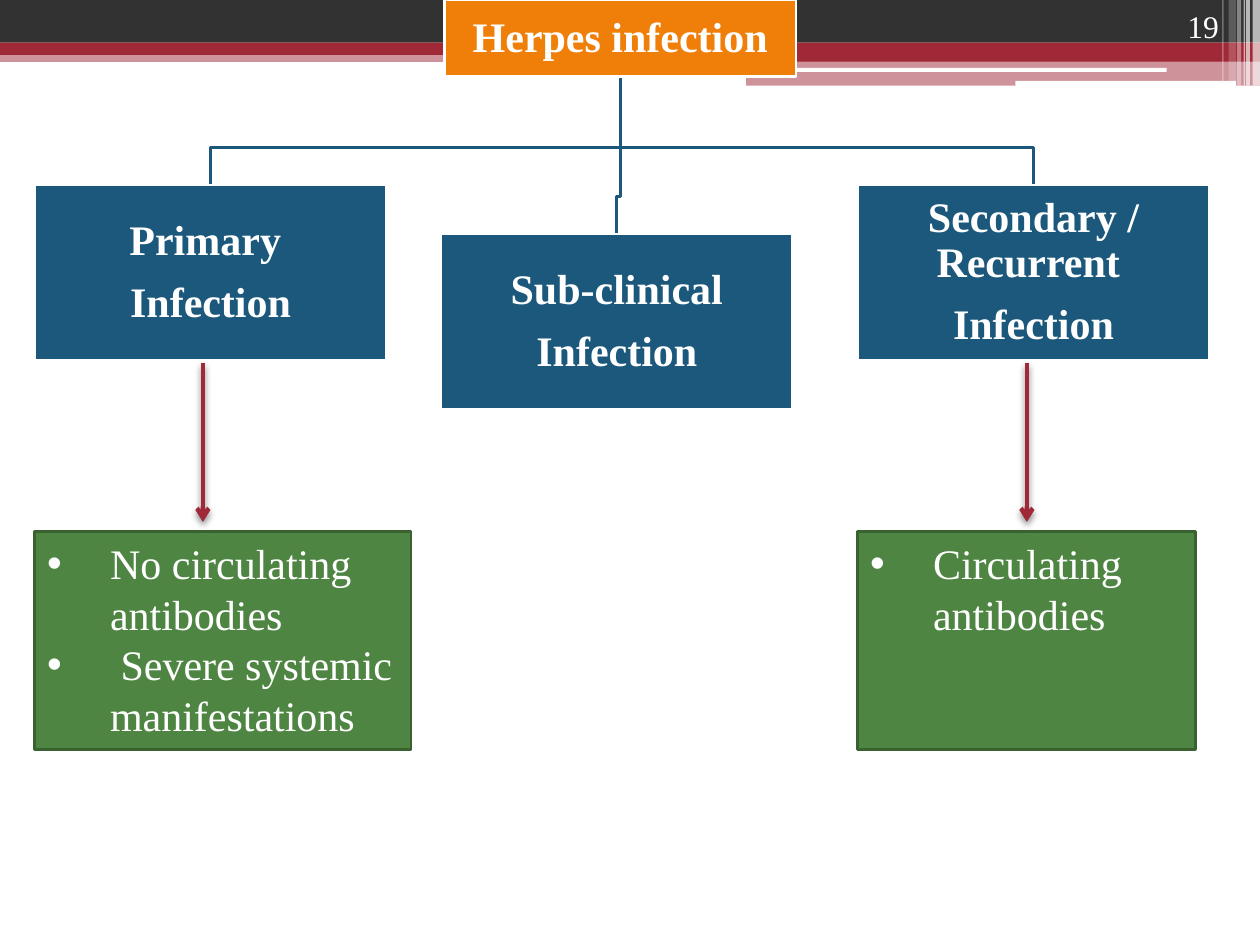
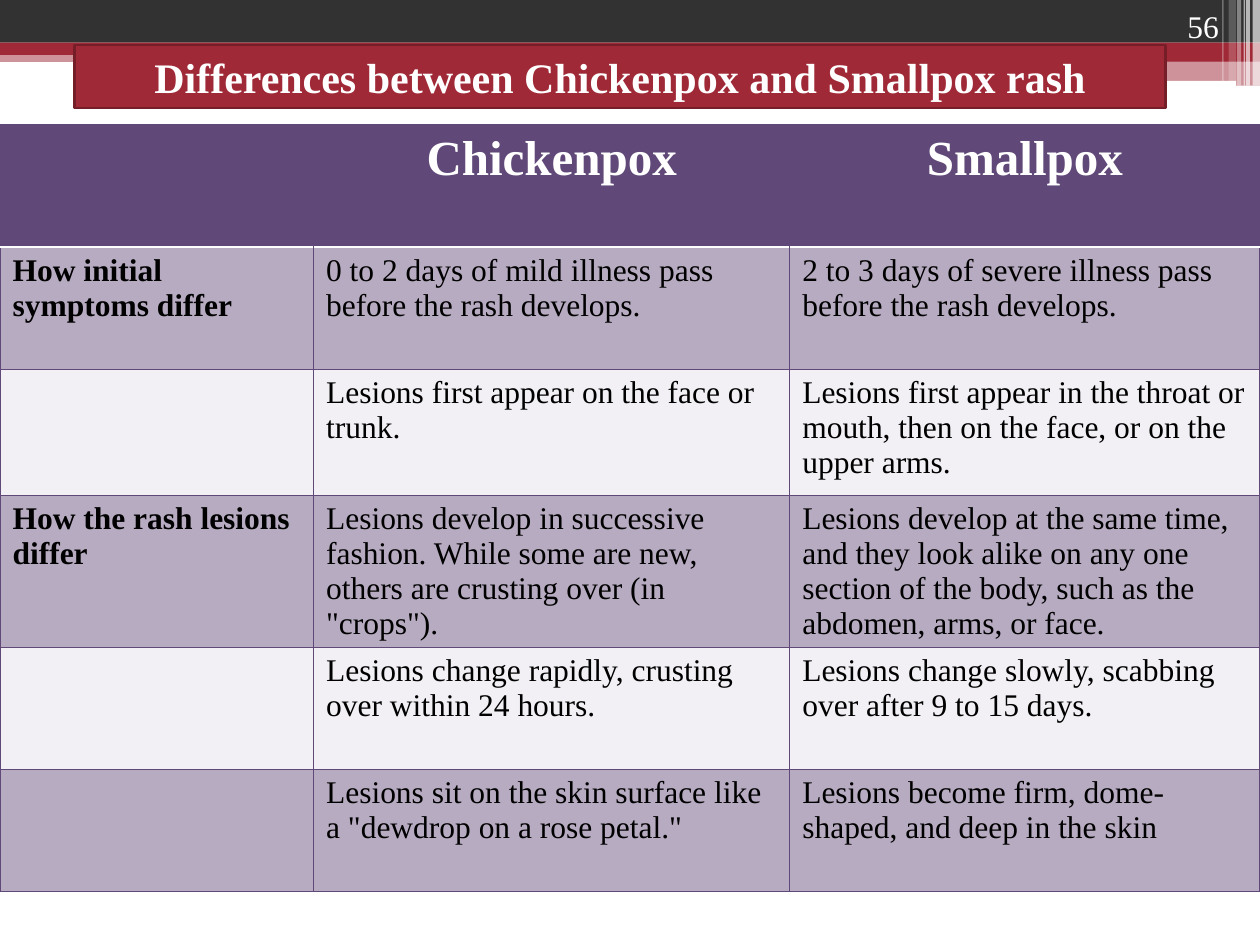
from dataclasses import dataclass
from typing import Any, NamedTuple, Optional

from lxml.etree import SubElement
from pptx import Presentation
from pptx.dml.color import RGBColor
from pptx.enum.shapes import MSO_CONNECTOR, MSO_SHAPE
from pptx.enum.text import MSO_ANCHOR as Anchor, PP_ALIGN as Align
from pptx.oxml.ns import qn
from pptx.shapes.autoshape import Shape
from pptx.slide import Slide
from pptx.table import _Cell as Cell
from pptx.util import Cm, Pt


@dataclass(frozen=True)
class Theme:
    font: str = "Times New Roman"
    white: str = "FFFFFF"
    black: str = "000000"
    dark: str = "323232"
    red: str = "9F2936"
    dark_red: str = "761E28"
    orange: str = "F07F09"
    blue: str = "1B587C"
    green: str = "4E8542"
    dark_green: str = "3A6231"
    purple: str = "604878"
    band: str = "B7ABC1"
    pale: str = "F2F0F5"
    heading_size: int = 24
    table_heading_size: int = 28
    body_size: int = 18
    outline: float = 1.5


THEME = Theme()


class Box(NamedTuple):
    """Left, top, width and height in centimetres."""
    left: float
    top: float
    width: float
    height: float

    @property
    def bottom(self) -> float:
        return self.top + self.height

    @property
    def center(self) -> float:
        return self.left + self.width / 2

    def lengths(self) -> list[Cm]:
        return [Cm(value) for value in self]


@dataclass(frozen=True)
class Band:
    box: Box
    color: str
    opacity: int = 100
    rounded: bool = False


@dataclass(frozen=True)
class Node:
    box: Box
    lines: tuple[str, ...]
    color: str = THEME.blue


@dataclass(frozen=True)
class Finding:
    arrow_x: float
    box: Box
    points: tuple[str, ...]


WIDTH, HEIGHT = 25.4, 19.05
ACCENT_LEFT = 15.04
ACCENT_WIDTH = WIDTH - ACCENT_LEFT
TALL, SHORT = 1.73, 1.63
BANDS = (
    Band(Box(0, 1.02, WIDTH, 0.23), THEME.red, 50),
    Band(Box(0, 0, WIDTH, 0.86), THEME.dark),
    Band(Box(0, 0.86, WIDTH, 0.25), THEME.red),
    Band(Box(ACCENT_LEFT, 0.99, ACCENT_WIDTH, 0.25), THEME.red),
    Band(Box(ACCENT_LEFT, 1.23, ACCENT_WIDTH, 0.5), THEME.red, 50),
    Band(Box(15.01, 1.37, 8.51, 0.08), THEME.white, rounded=True),
    Band(Box(20.47, 1.63, 4.45, 0.1), THEME.white, rounded=True),
    *(Band(Box(left, 0, width, height), THEME.white, opacity)
      for left, width, height, opacity in (
          (25.25, 0.15, TALL, 65), (25.12, 0.08, TALL, 65),
          (25.07, 0.03, TALL, 60), (24.94, 0.08, TALL, 40),
          (24.77, 0.15, SHORT, 20), (24.64, 0.03, SHORT, 30))),
)
NUMBER_BOX = Box(22.71, 0, 2.11, 1.02)

NODE_WIDTH, NODE_HEIGHT, NODE_TOP = 7.09, 3.53, 3.73
ELBOW_RISE = 0.76
ROOT = Node(Box(8.96, 0, NODE_WIDTH, 1.55), ("Herpes infection",), THEME.orange)
CHILDREN = (
    Node(Box(17.29, NODE_TOP, NODE_WIDTH, NODE_HEIGHT),
         ("Secondary / Recurrent ", "Infection")),
    Node(Box(8.89, 4.72, NODE_WIDTH, NODE_HEIGHT), ("Sub-clinical", "Infection")),
    Node(Box(0.7, NODE_TOP, NODE_WIDTH, NODE_HEIGHT), ("Primary ", "Infection")),
)
ARROW_TOP, ARROW_BOTTOM = 7.32, 10.52
FINDINGS = (
    Finding(4.09, Box(0.7, 10.72, 7.59, 4.39),
            ("No circulating antibodies", " Severe systemic manifestations")),
    Finding(20.7, Box(17.29, 10.72, 6.81, 4.39), ("Circulating antibodies",)),
)

TITLE_BOX = Box(1.5, 0.91, 22, 1.27)
TABLE_BOX = Box(0, 2.52, WIDTH, 15.39)
COLUMN_WIDTHS = (6.32, 9.6, 9.48)
ROW_HEIGHTS = (2.46, 2.46, 2.54, 3.07, 2.46, 2.46)
RASH_ROWS = (
    ("", "Chickenpox", "Smallpox"),
    ("How initial symptoms differ",
     "0 to 2 days of mild illness pass before the rash develops.",
     "2 to 3 days of severe illness pass before the rash develops."),
    ("", "Lesions first appear on the face or trunk.",
     "Lesions first appear in the throat or mouth, then on the face, "
     "or on the upper arms."),
    ("How the rash lesions differ",
     "Lesions develop in successive fashion. While some are new, "
     'others are crusting over (in "crops").',
     "Lesions develop at the same time, and they look alike on any one "
     "section of the body, such as the abdomen, arms, or face."),
    ("", "Lesions change rapidly, crusting over within 24 hours.",
     "Lesions change slowly, scabbing over after 9 to 15 days."),
    ("", 'Lesions sit on the skin surface like a "dewdrop on a rose petal."',
     "Lesions become firm, dome-shaped, and deep in the skin"),
)


def rgb(color: str) -> RGBColor:
    return RGBColor.from_string(color)


def apply_format(target: Any, values: dict[str, Any]) -> None:
    for name, value in values.items():
        setattr(target, name, value)


def set_line(line: Any, color: str, width: float) -> None:
    line.color.rgb = rgb(color)
    line.width = Pt(width)


def add_block(slide: Slide, box: Box, color: str, outline: Optional[str] = None,
              rounded: bool = False) -> Shape:
    kind = MSO_SHAPE.ROUNDED_RECTANGLE if rounded else MSO_SHAPE.RECTANGLE
    shape = slide.shapes.add_shape(kind, *box.lengths())
    shape.shadow.inherit = False
    shape.fill.solid()
    shape.fill.fore_color.rgb = rgb(color)
    if outline:
        set_line(shape.line, outline, THEME.outline)
    else:
        shape.line.fill.background()
    return shape


def write(frame: Any, lines: tuple[str, ...], size: int, color: str = THEME.white,
          bold: bool = False, bullet: bool = False, **layout: Any) -> None:
    """Fill a text frame; layout holds paragraph format values."""
    for index, line in enumerate(lines):
        paragraph = frame.add_paragraph() if index else frame.paragraphs[0]
        if bullet:
            properties = paragraph._p.get_or_add_pPr()
            properties.set("marL", str(Cm(1.27)))
            properties.set("indent", str(-Cm(1.27)))
            SubElement(properties, qn("a:buFont"), typeface="Arial")
            SubElement(properties, qn("a:buChar"), char="•")
        values = dict(layout)
        gap = values.pop("gap", None)
        if gap and index:
            values["space_before"] = Pt(gap)
        apply_format(paragraph, values)
        run = paragraph.add_run()
        run.text = line
        apply_format(run.font, {"name": THEME.font, "size": Pt(size), "bold": bold})
        run.font.color.rgb = rgb(color)


def add_header(slide: Slide) -> None:
    for band in BANDS:
        shape = add_block(slide, band.box, band.color, rounded=band.rounded)
        if band.opacity < 100:
            color = shape.element.spPr.find(qn("a:solidFill")).find(qn("a:srgbClr"))
            SubElement(color, qn("a:alpha"), val=str(band.opacity * 1000))


def add_number(slide: Slide, number: int) -> None:
    frame = slide.shapes.add_textbox(*NUMBER_BOX.lengths()).text_frame
    apply_format(frame, {"word_wrap": True, "vertical_anchor": Anchor.BOTTOM})
    write(frame, (str(number),), THEME.body_size, alignment=Align.RIGHT)


def add_branch(slide: Slide, parent: Box, child: Box) -> None:
    """Draw the elbow that turns a fixed rise above the child."""
    turn = child.top - ELBOW_RISE
    corners = [(Cm(x), Cm(y)) for x, y in (
        (parent.center, parent.bottom), (parent.center, turn),
        (child.center, turn), (child.center, child.top))]
    builder = slide.shapes.build_freeform(*corners[0])
    builder.add_line_segments(corners[1:], close=False)
    branch = builder.convert_to_shape()
    branch.shadow.inherit = False
    branch.fill.background()
    set_line(branch.line, THEME.blue, THEME.outline)


def add_node(slide: Slide, node: Node) -> None:
    frame = add_block(slide, node.box, node.color, THEME.white).text_frame
    margins = dict.fromkeys(
        ("margin_left", "margin_right", "margin_top", "margin_bottom"), Cm(0.05))
    apply_format(frame, {"word_wrap": True, "vertical_anchor": Anchor.MIDDLE, **margins})
    write(frame, node.lines, THEME.heading_size, bold=True, gap=9.6,
          alignment=Align.CENTER, line_spacing=0.9)


def add_arrow(slide: Slide, x: float) -> None:
    arrow = slide.shapes.add_connector(
        MSO_CONNECTOR.STRAIGHT, Cm(x), Cm(ARROW_TOP), Cm(x), Cm(ARROW_BOTTOM))
    set_line(arrow.line, THEME.red, 2.5)
    properties = arrow.element.spPr
    SubElement(properties.find(qn("a:ln")), qn("a:tailEnd"), type="arrow")
    shadow = SubElement(
        SubElement(properties, qn("a:effectLst")), qn("a:outerShdw"),
        blurRad=str(Pt(4)), dist=str(Pt(2)), dir="5400000", rotWithShape="0")
    color = SubElement(shadow, qn("a:srgbClr"), val=THEME.black)
    SubElement(color, qn("a:alpha"), val="45000")


def add_finding(slide: Slide, finding: Finding) -> None:
    add_arrow(slide, finding.arrow_x)
    frame = add_block(slide, finding.box, THEME.green, THEME.dark_green).text_frame
    apply_format(frame, {"word_wrap": True, "vertical_anchor": Anchor.TOP})
    write(frame, finding.points, THEME.heading_size, bullet=True, alignment=Align.LEFT)


def set_borders(cell: Cell, borders: dict[str, Optional[tuple[str, float]]]) -> None:
    """Set the sides L, R, T, B, given in that order; None hides a side."""
    properties = cell._tc.get_or_add_tcPr()
    for side, border in borders.items():
        color, width = border or (THEME.white, 0)
        line = SubElement(properties, qn(f"a:ln{side}"), w=str(Pt(width)))
        if border:
            fill = SubElement(line, qn("a:solidFill"))
            SubElement(fill, qn("a:srgbClr"), val=color)
        else:
            SubElement(line, qn("a:noFill"))


def add_rash_table(slide: Slide) -> None:
    table = slide.shapes.add_table(
        len(RASH_ROWS), len(COLUMN_WIDTHS), *TABLE_BOX.lengths()).table
    table.horz_banding = False
    for column, width in zip(table.columns, COLUMN_WIDTHS):
        column.width = Cm(width)
    grid, divider = (THEME.purple, 0.75), (THEME.white, THEME.outline)
    last = len(COLUMN_WIDTHS) - 1
    for row, (texts, height) in enumerate(zip(RASH_ROWS, ROW_HEIGHTS)):
        table.rows[row].height = Cm(height)
        heading = row == 0
        for column, text in enumerate(texts):
            cell = table.cell(row, column)
            set_borders(cell, {
                "L": None if heading and column > 0 else grid,
                "R": None if heading and column < last else grid,
                "T": divider if row == 1 else grid,
                "B": divider if heading else grid})
            cell.fill.solid()
            shade = THEME.band if row % 2 else THEME.pale
            cell.fill.fore_color.rgb = rgb(THEME.purple if heading else shade)
            if text:
                write(cell.text_frame, (text,),
                      THEME.table_heading_size if heading else THEME.body_size,
                      THEME.white if heading else THEME.black,
                      bold=heading or column == 0,
                      alignment=Align.CENTER if heading else Align.LEFT)


def build_herpes_slide(slide: Slide) -> None:
    for child in CHILDREN:
        add_branch(slide, ROOT.box, child.box)
    for node in (ROOT, *CHILDREN):
        add_node(slide, node)
    for finding in FINDINGS:
        add_finding(slide, finding)


def build_rash_slide(slide: Slide) -> None:
    add_rash_table(slide)
    frame = add_block(slide, TITLE_BOX, THEME.red, THEME.dark_red).text_frame
    apply_format(frame, {"word_wrap": True, "vertical_anchor": Anchor.MIDDLE})
    write(frame, ("Differences between Chickenpox and Smallpox rash",),
          THEME.heading_size, bold=True, alignment=Align.CENTER)


def main() -> None:
    presentation = Presentation()
    apply_format(presentation, {"slide_width": Cm(WIDTH), "slide_height": Cm(HEIGHT)})
    for number, build in ((19, build_herpes_slide), (56, build_rash_slide)):
        slide = presentation.slides.add_slide(presentation.slide_layouts[6])
        add_header(slide)
        build(slide)
        add_number(slide, number)
    presentation.save("out.pptx")


if __name__ == "__main__":
    main()
